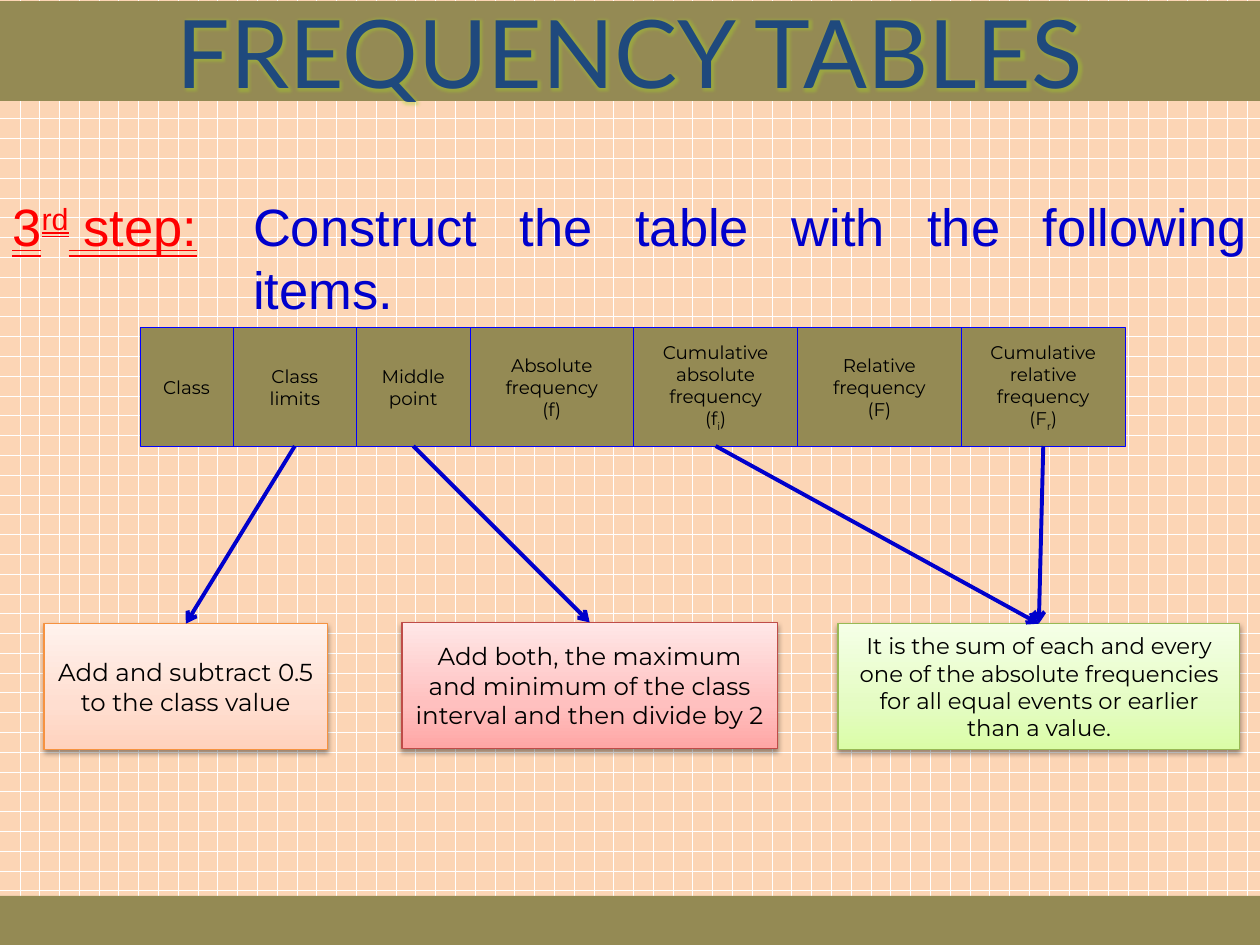
import pptx
import pptx.util
import pptx.dml.color
import pptx.enum.dml
import pptx.enum.shapes
import pptx.enum.text
import pptx.oxml.ns
import lxml.etree

Inches = pptx.util.Inches
Pt = pptx.util.Pt
RECT = pptx.enum.shapes.MSO_SHAPE.RECTANGLE
ALIGN = pptx.enum.text.PP_ALIGN
TOP, BOTTOM = 0, 2  # connection sites of a rectangle

# Content: a paragraph is a list of (text, baseline in percent) runs
TITLE = "FREQUENCY TABLES"
STEP = [("3", 0), ("rd", 30), (" step:", 0)]
TASK = [("Construct the table with the following items.", 0)]
HEADS = [  # width, paragraphs
    (0.74, [[("Class", 0)]]),
    (0.98, [[("Class limits", 0)]]),
    (0.9, [[("Middle point", 0)]]),
    (1.3, [[("Absolute frequency", 0)], [("(f)", 0)]]),
    (1.3, [[("Cumulative absolute frequency", 0)],
           [("(f", 0), ("i", -25), (")", 0)]]),
    (1.3, [[("Relative frequency", 0)], [("(F)", 0)]]),
    (1.3, [[("Cumulative relative frequency", 0)],
           [("(F", 0), ("r", -25), (")", 0)]]),
]
NOTES = [  # text, left, top, width, tint, heads it explains
    ("Add and subtract 0.5 to the class value",
     0.35, 4.95, 2.25, "orange", [1]),
    ("Add both, the maximum and minimum of the class interval "
     "and then divide by 2", 3.19, 4.94, 2.98, "red", [2]),
    ("It is the sum of each and every one of the absolute frequencies "
     "for all equal events or earlier than a value.",
     6.65, 4.95, 3.19, "green", [4, 6]),
]

THEME = {
    "paper": "FCD5B5", "grid": "FFFFFF", "band": "948A54",
    "title": ("Lato", 54, "1F497D"),
    "step": ("Arial", 30, "FF0000"),
    "task": ("Arial", 30, "0000CC"),
    "head": ("Montserrat", 10.5, "000000"),
    "orange": (("Montserrat", 14, "000000"), "F69240",
               ("FFD2BD", "FFDED0", "FFF2ED")),
    "red": (("Montserrat", 14, "000000"), "BF4C48",
            ("FFA6A5", "FFC0BF", "FFE7E7")),
    "green": (("Montserrat", 13, "000000"), "98B955",
              ("DAFDA7", "E4FCC2", "F5FFE7")),
    "rule": "0000FF", "arrow": "0000CC",
    "edge": "FFFF00", "glow": "A5D028", "shade": "000000",
}


def rgb(hue):
    return pptx.dml.color.RGBColor.from_string(hue)


def node(parent, tag, **attrs):
    return lxml.etree.SubElement(
        parent, pptx.oxml.ns.qn("a:" + tag),
        {key: str(val) for key, val in attrs.items()})


def tint(parent, hue, alpha=100):
    color = node(parent, "srgbClr", val=hue)
    if alpha < 100:
        node(color, "alpha", val=alpha * 1000)


def write(shape, paras, style, align=ALIGN.CENTER):
    font, size, hue = style
    frame = shape.text_frame
    frame.word_wrap = True
    for num, runs in enumerate(paras):
        para = frame.add_paragraph() if num else frame.paragraphs[0]
        para.alignment = align
        for text, base in runs:
            run = para.add_run()
            run.text = text
            run.font.name, run.font.size = font, Pt(size)
            run.font.color.rgb = rgb(hue)
            if base:
                run.font._element.set("baseline", str(base * 1000))
    return frame


def box(group, place, fill=None, line=None, width=0.75):
    shape = group.add_shape(RECT, *map(Inches, place))
    shape.shadow.inherit = False
    if fill:
        shape.fill.solid()
        shape.fill.fore_color.rgb = rgb(fill)
    if line:
        shape.line.color.rgb = rgb(line)
        shape.line.width = Pt(width)
    else:
        shape.line.fill.background()
    return shape


def shade(shape, hues):
    """Three-stop upward gradient and a soft drop shadow."""
    shape.fill.gradient()
    props = shape._element.spPr
    grad = props.find(pptx.oxml.ns.qn("a:gradFill"))
    for child in list(grad):
        grad.remove(child)
    stops = node(grad, "gsLst")
    for pos, hue in zip((0, 35, 100), hues):
        tint(node(stops, "gs", pos=pos * 1000), hue)
    node(grad, "lin", ang=270 * 60000, scaled=1)
    effects = props.find(pptx.oxml.ns.qn("a:effectLst"))
    tint(node(effects, "outerShdw", blurRad=Pt(3.1), dist=Pt(1.6),
              dir=90 * 60000, rotWithShape=0), THEME["shade"], 38)


def arrow(slide, start, end):
    line = slide.shapes.add_connector(
        pptx.enum.shapes.MSO_CONNECTOR.STRAIGHT, 0, 0, 0, 0)
    line.begin_connect(start, BOTTOM)
    line.end_connect(end, TOP)
    line.line.color.rgb = rgb(THEME["arrow"])
    line.line.width = Pt(2.25)
    node(line.line._get_or_add_ln(), "tailEnd", type="arrow")
    node(line._element.spPr, "effectLst")


def label(slide, place, runs, style, align):
    shape = slide.shapes.add_textbox(*map(Inches, place))
    frame = write(shape, [runs], style, align)
    frame.auto_size = pptx.enum.text.MSO_AUTO_SIZE.SHAPE_TO_FIT_TEXT
    return frame


def main():
    deck = pptx.Presentation()
    deck.slide_width, deck.slide_height = Inches(10), Inches(7.5)
    slide = deck.slides.add_slide(deck.slide_layouts[6])

    # Squared paper
    paper = slide.background.fill
    paper.patterned()
    paper.pattern = pptx.enum.dml.MSO_PATTERN.DOTTED_GRID
    paper.fore_color.rgb = rgb(THEME["grid"])
    paper.back_color.rgb = rgb(THEME["paper"])

    # Title and foot bands
    band = box(slide.shapes, (0, 0.01, 10, 0.79), THEME["band"])
    frame = write(band, [[(TITLE, 0)]], THEME["title"])
    props = frame.paragraphs[0].runs[0].font._element
    edge = lxml.etree.Element(pptx.oxml.ns.qn("a:ln"), w=str(Pt(0.75)))
    tint(node(edge, "solidFill"), THEME["edge"])
    props.insert(0, edge)
    effects = lxml.etree.Element(pptx.oxml.ns.qn("a:effectLst"))
    tint(node(effects, "glow", rad=Pt(5)), THEME["glow"], 40)
    props.insert(2, effects)  # after the outline and the fill
    box(slide.shapes, (0, 7.11, 10, 0.39), THEME["band"])

    # Step and task
    frame = label(slide, (0, 1.49, 2.01, 0.61), STEP, THEME["step"],
                  ALIGN.LEFT)
    frame.word_wrap = False
    for run in frame.paragraphs[0].runs:
        run.font.underline = pptx.enum.text.MSO_UNDERLINE.DOUBLE_LINE
    label(slide, (1.91, 1.49, 8.09, 1.11), TASK, THEME["task"],
          ALIGN.JUSTIFY)

    # Header row
    row = slide.shapes.add_group_shape()
    heads, left = [], 1.11
    for width, paras in HEADS:
        head = box(row.shapes, (left, 2.6, width, 0.94), THEME["band"],
                   THEME["rule"], 0.25)
        write(head, paras, THEME["head"])
        heads.append(head)
        left += width

    # Notes and their arrows
    for text, left, top, width, hue, links in NOTES:
        style, line, hues = THEME[hue]
        note = box(slide.shapes, (left, top, width, 1), line=line)
        shade(note, hues)
        write(note, [[(text, 0)]], style)
        for num in links:
            arrow(slide, heads[num], note)

    deck.save("out.pptx")


if __name__ == "__main__":
    main()
